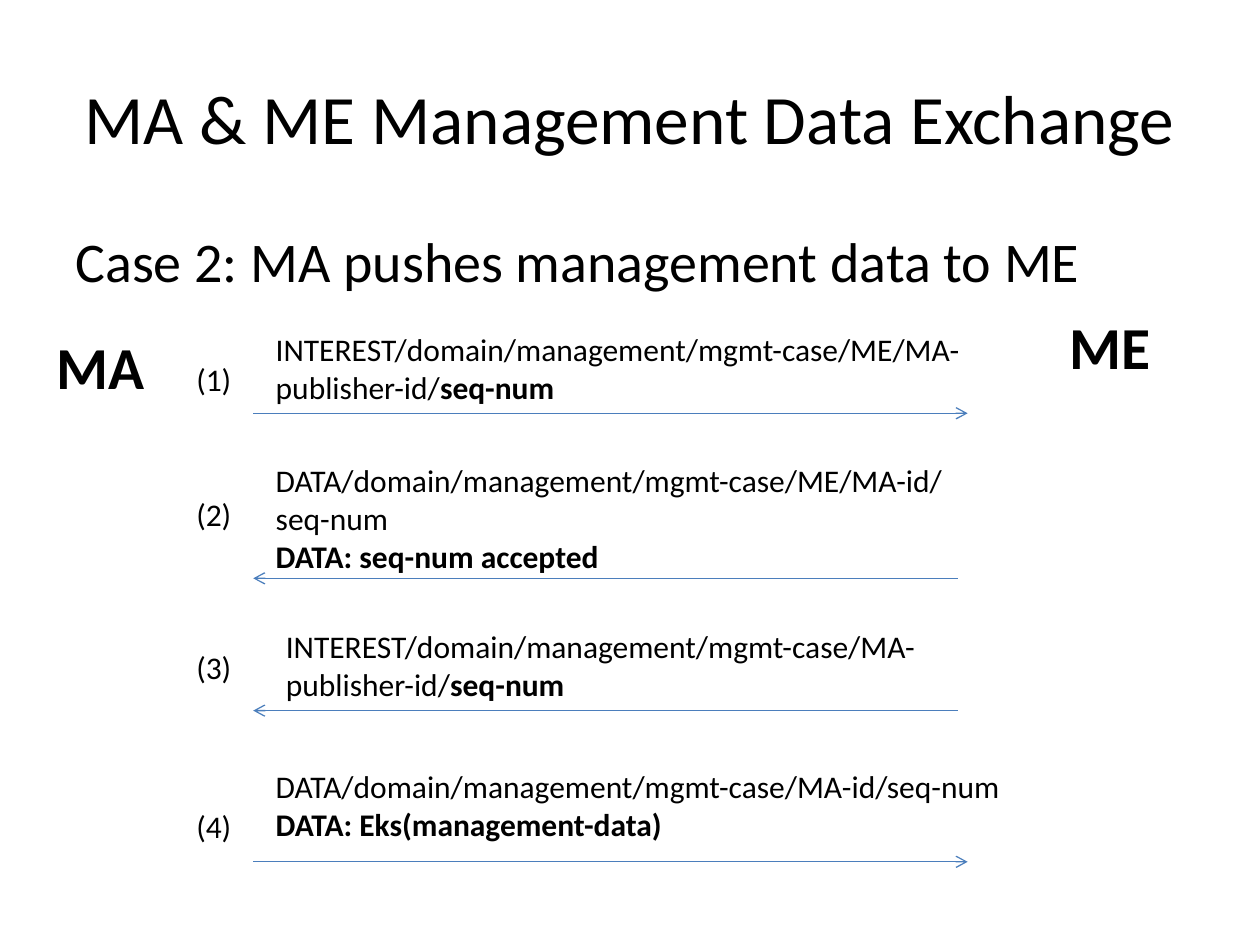
from typing import NamedTuple

from lxml import etree
from pptx import Presentation
from pptx.dml.color import RGBColor
from pptx.enum.shapes import MSO_CONNECTOR
from pptx.enum.text import MSO_ANCHOR, PP_ALIGN
from pptx.oxml.ns import qn
from pptx.util import Pt

EMU_PER_PX = 9144  # 100 px to the inch
STRAIGHT = MSO_CONNECTOR.STRAIGHT
TOP, MIDDLE = MSO_ANCHOR.TOP, MSO_ANCHOR.MIDDLE
LEFT, CENTER = PP_ALIGN.LEFT, PP_ALIGN.CENTER

COLORS = {"text": "000000", "arrow": "4B7EBC"}
FONT = "Calibri"
ARROW_LEFT = 201
NUMBER_LEFT, NUMBER_W, NUMBER_H = 146, 110, 40


class Run(NamedTuple):
    text: str
    bold: bool = False


class Label(NamedTuple):
    box: tuple[int, int, int, int]
    paragraphs: list[list[Run]]
    size: float = 18
    anchor: MSO_ANCHOR = TOP
    align: PP_ALIGN = LEFT


class Message(NamedTuple):
    label: Label
    number_y: int
    arrow_y: int
    to_me: bool


HEADINGS = [
    Label((50, 30, 900, 125), [[Run("MA & ME Management Data Exchange")]],
          39.6, MIDDLE, CENTER),
    Label((50, 175, 900, 495), [[Run("Case 2: MA pushes management data to ME")]], 32),
]

PARTIES = [
    Label((35, 257, 94, 67), [[Run("MA", True)]], 34),
    Label((839, 241, 94, 67), [[Run("ME", True)]], 34),
]

MESSAGES = [
    Message(Label((209, 257, 606, 71), [
        [Run("INTEREST/domain/management/mgmt-case/ME/MA-publisher-id/"),
         Run("seq-num", True)]]), 281, 328, True),
    Message(Label((209, 361, 567, 101), [
        [Run("DATA/domain/management/mgmt-case/ME/MA-id/seq-num")],
        [Run("DATA: seq-num accepted", True)]]), 388, 459, False),
    Message(Label((217, 493, 551, 71), [
        [Run("INTEREST/domain/management/mgmt-case/MA-publisher-id/"),
         Run("seq-num", True)]]), 509, 564, False),
    Message(Label((209, 604, 606, 71), [
        [Run("DATA/domain/management/mgmt-case/MA-id/seq-num")],
        [Run("DATA: Eks(management-data)", True)]]), 636, 684, True),
]


def px(value: int) -> int:
    return value * EMU_PER_PX


def add_label(s, label: Label) -> None:
    tf = s.shapes.add_textbox(*map(px, label.box)).text_frame
    tf.word_wrap = True
    tf.vertical_anchor = label.anchor
    for i, runs in enumerate(label.paragraphs):
        p = tf.add_paragraph() if i else tf.paragraphs[0]
        p.alignment = label.align
        for run in runs:
            r = p.add_run()
            r.text = run.text
            font_format = {"name": FONT, "size": Pt(label.size), "bold": run.bold}
            for name, value in font_format.items():
                setattr(r.font, name, value)
            r.font.color.rgb = RGBColor.from_string(COLORS["text"])


def add_arrow(s, x1: int, x2: int, y: int) -> None:
    sp = s.shapes.add_connector(STRAIGHT, px(x1), px(y), px(x2), px(y))
    sp.line.color.rgb = RGBColor.from_string(COLORS["arrow"])
    sp.line.width = Pt(0.75)
    etree.SubElement(sp.line._get_or_add_ln(), qn("a:tailEnd"), type="arrow")
    etree.SubElement(sp._element.spPr, qn("a:effectLst"))


def add_message(s, number: int, message: Message) -> None:
    add_label(s, message.label)
    add_label(s, Label((NUMBER_LEFT, message.number_y, NUMBER_W, NUMBER_H),
                       [[Run(f"({number})")]]))
    ends = (ARROW_LEFT, 768) if message.to_me else (760, ARROW_LEFT)
    add_arrow(s, *ends, message.arrow_y)


def main() -> None:
    prs = Presentation()
    prs.slide_width, prs.slide_height = px(1000), px(750)
    s = prs.slides.add_slide(prs.slide_layouts[6])

    # Title, case line and the two parties
    for label in HEADINGS + PARTIES:
        add_label(s, label)

    # Numbered messages between the parties
    for number, message in enumerate(MESSAGES, start=1):
        add_message(s, number, message)

    prs.save("out.pptx")


if __name__ == "__main__":
    main()
